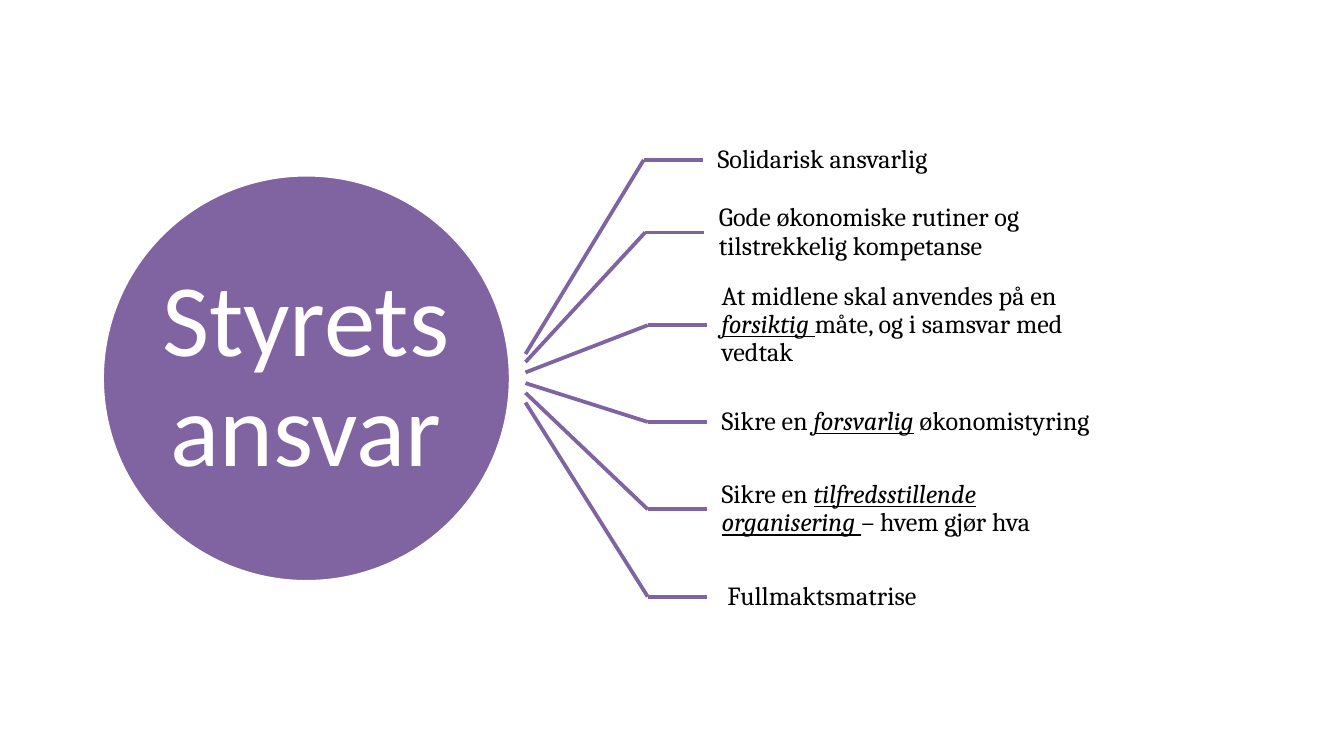
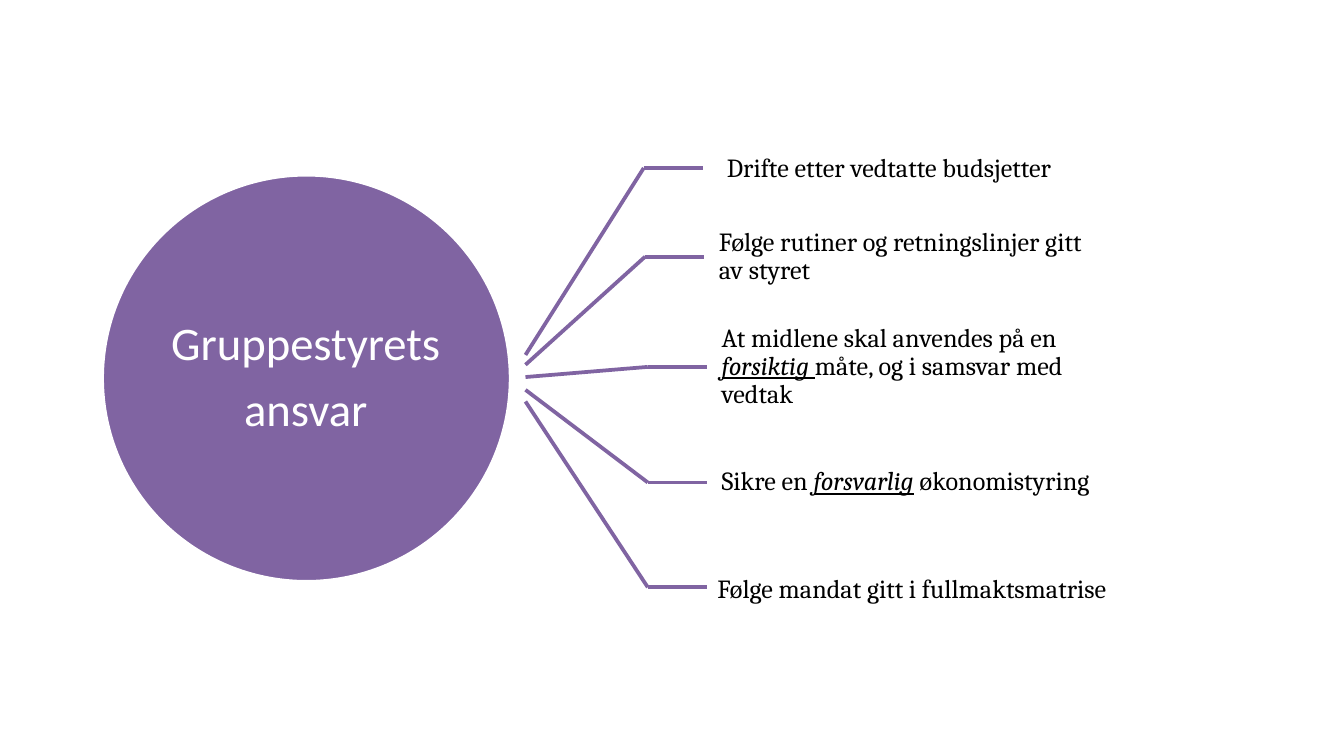
from dataclasses import dataclass

from lxml.etree import SubElement
from pptx import Presentation
from pptx.dml.color import RGBColor
from pptx.enum.shapes import MSO_CONNECTOR, MSO_SHAPE
from pptx.enum.text import MSO_ANCHOR, MSO_AUTO_SIZE, PP_ALIGN
from pptx.oxml.ns import qn
from pptx.presentation import Presentation as Deck
from pptx.slide import Slide
from pptx.text.text import TextFrame
from pptx.util import Inches, Length, Pt


@dataclass(frozen=True)
class Theme:
    purple: RGBColor = RGBColor(0x80, 0x64, 0xA2)
    white: RGBColor = RGBColor(0xFF, 0xFF, 0xFF)
    black: RGBColor = RGBColor(0x00, 0x00, 0x00)
    title_font: str = "Calibri"
    label_font: str = "Cambria"
    label_size: int = 14
    line_width: int = 2
    line_spacing: float = 0.9
    space_after: float = 0.35


@dataclass(frozen=True)
class Box:
    left: float
    top: float
    width: float
    height: float

    def lengths(self) -> tuple[Length, Length, Length, Length]:
        return (grid(self.left), grid(self.top), grid(self.width), grid(self.height))


@dataclass(frozen=True)
class Run:
    text: str
    emphasized: bool = False


@dataclass(frozen=True)
class Branch:
    row: float
    elbow: float
    runs: tuple[Run, ...]
    loose_box: Box | None = None


@dataclass(frozen=True)
class Fan:
    title: str
    title_size: int
    label_height: float
    branches: tuple[Branch, ...]


THEME = Theme()
COLUMNS, ROWS = 100, 56.25
CIRCLE = Box(7.6, 13, 30.4, 30.3)
TITLE = Box(12, 17.4, 21.5, 21.5)
CENTER_ROW = CIRCLE.top + CIRCLE.height / 2
RAY_START = 39.1
RAY_SPREAD = 1 / 9
LEADER_WIDTH = 4.4
LABEL_WIDTH = 31.3
LABEL_INSET = 1.1

CAREFUL_USE = (
    Run("At midlene skal anvendes på en "),
    Run("forsiktig ", True),
    Run("måte, og i samsvar med vedtak"),
)
SOUND_CONTROL = (Run("Sikre en "), Run("forsvarlig", True), Run(" økonomistyring"))

FANS = (
    Fan("Styrets ansvar", 55, 6.5, (
        Branch(11.9, 47.9, (Run("Solidarisk ansvarlig"),)),
        Branch(17.3, 48, (Run("Gode økonomiske rutiner og tilstrekkelig kompetanse"),)),
        Branch(24.2, 48.2, CAREFUL_USE),
        Branch(31.4, 48.2, SOUND_CONTROL),
        Branch(37.9, 48.2, (
            Run("Sikre en "),
            Run("tilfredsstillende organisering ", True),
            Run("– hvem gjør hva"),
        )),
        Branch(44.4, 48.2, (Run(" Fullmaktsmatrise"),)),
    )),
    Fan("Gruppestyrets\nansvar", 25, 7.8, (
        Branch(12.5, 47.9, (Run("Drifte etter vedtatte budsjetter"),),
               Box(53.1, 10.8, 28.5, 3.4)),
        Branch(19.1, 48, (Run("Følge rutiner og retningslinjer gitt av styret"),)),
        Branch(27.3, 48.2, CAREFUL_USE),
        Branch(35.9, 48.2, SOUND_CONTROL),
        Branch(43.7, 48.2, (Run("Følge mandat gitt i fullmaktsmatrise"),),
               Box(52.4, 42.1, 33.6, 4.7)),
    )),
)


def grid(units: float) -> Length:
    return Inches(units * 10 / COLUMNS)


def set_insets(text_frame: TextFrame, inset: float) -> None:
    text_frame.margin_left = text_frame.margin_right = grid(inset)
    text_frame.margin_top = text_frame.margin_bottom = grid(inset)


def draw_circle(slide: Slide) -> None:
    circle = slide.shapes.add_shape(MSO_SHAPE.OVAL, *CIRCLE.lengths())
    circle.shadow.inherit = False
    circle.fill.solid()
    circle.fill.fore_color.rgb = THEME.purple
    circle.line.color.rgb = THEME.white
    circle.line.width = Pt(THEME.line_width)


def draw_title(slide: Slide, fan: Fan) -> None:
    title = slide.shapes.title
    title.left, title.top, title.width, title.height = TITLE.lengths()
    title.element.getparent().append(title.element)
    text_frame = title.text_frame
    text_frame.text = fan.title
    text_frame.word_wrap = True
    text_frame.auto_size = MSO_AUTO_SIZE.NONE
    text_frame.vertical_anchor = MSO_ANCHOR.MIDDLE
    set_insets(text_frame, 0)
    for paragraph in text_frame.paragraphs:
        paragraph.alignment = PP_ALIGN.CENTER
        paragraph.line_spacing = THEME.line_spacing
        paragraph.space_after = Pt(fan.title_size * THEME.space_after)
        for run in paragraph.runs:
            run.font.name = THEME.title_font
            run.font.size = Pt(fan.title_size)
            run.font.color.rgb = THEME.white


def draw_line(slide: Slide, start: tuple[float, float], end: tuple[float, float]) -> None:
    connector = slide.shapes.add_connector(
        MSO_CONNECTOR.STRAIGHT, *(grid(units) for units in (*start, *end))
    )
    connector.line.color.rgb = THEME.purple
    connector.line.width = Pt(THEME.line_width)
    SubElement(connector.element.spPr, qn("a:effectLst"))


def draw_label(slide: Slide, branch: Branch, height: float) -> None:
    box = branch.loose_box or Box(
        branch.elbow + LEADER_WIDTH, branch.row - height / 2, LABEL_WIDTH, height
    )
    text_frame = slide.shapes.add_textbox(*box.lengths()).text_frame
    text_frame.word_wrap = True
    paragraph = text_frame.paragraphs[0]
    paragraph.alignment = PP_ALIGN.LEFT
    if branch.loose_box is None:
        text_frame.vertical_anchor = MSO_ANCHOR.MIDDLE
        set_insets(text_frame, LABEL_INSET)
        paragraph.line_spacing = THEME.line_spacing
    for part in branch.runs:
        run = paragraph.add_run()
        run.text = part.text
        run.font.name = THEME.label_font
        run.font.size = Pt(THEME.label_size)
        run.font.color.rgb = THEME.black
        run.font.italic = part.emphasized
        run.font.underline = part.emphasized


def draw_branch(slide: Slide, branch: Branch, label_height: float) -> None:
    start_row = CENTER_ROW + (branch.row - CENTER_ROW) * RAY_SPREAD
    elbow = (branch.elbow, branch.row)
    draw_line(slide, (RAY_START, start_row), elbow)
    draw_line(slide, elbow, (branch.elbow + LEADER_WIDTH, branch.row))
    draw_label(slide, branch, label_height)


def add_fan_slide(presentation: Deck, fan: Fan) -> None:
    slide = presentation.slides.add_slide(presentation.slide_layouts[5])
    draw_circle(slide)
    draw_title(slide, fan)
    for branch in fan.branches:
        draw_branch(slide, branch, fan.label_height)


def main() -> None:
    presentation = Presentation()
    presentation.slide_width = grid(COLUMNS)
    presentation.slide_height = grid(ROWS)
    for fan in FANS:
        add_fan_slide(presentation, fan)
    presentation.save("out.pptx")


if __name__ == "__main__":
    main()
